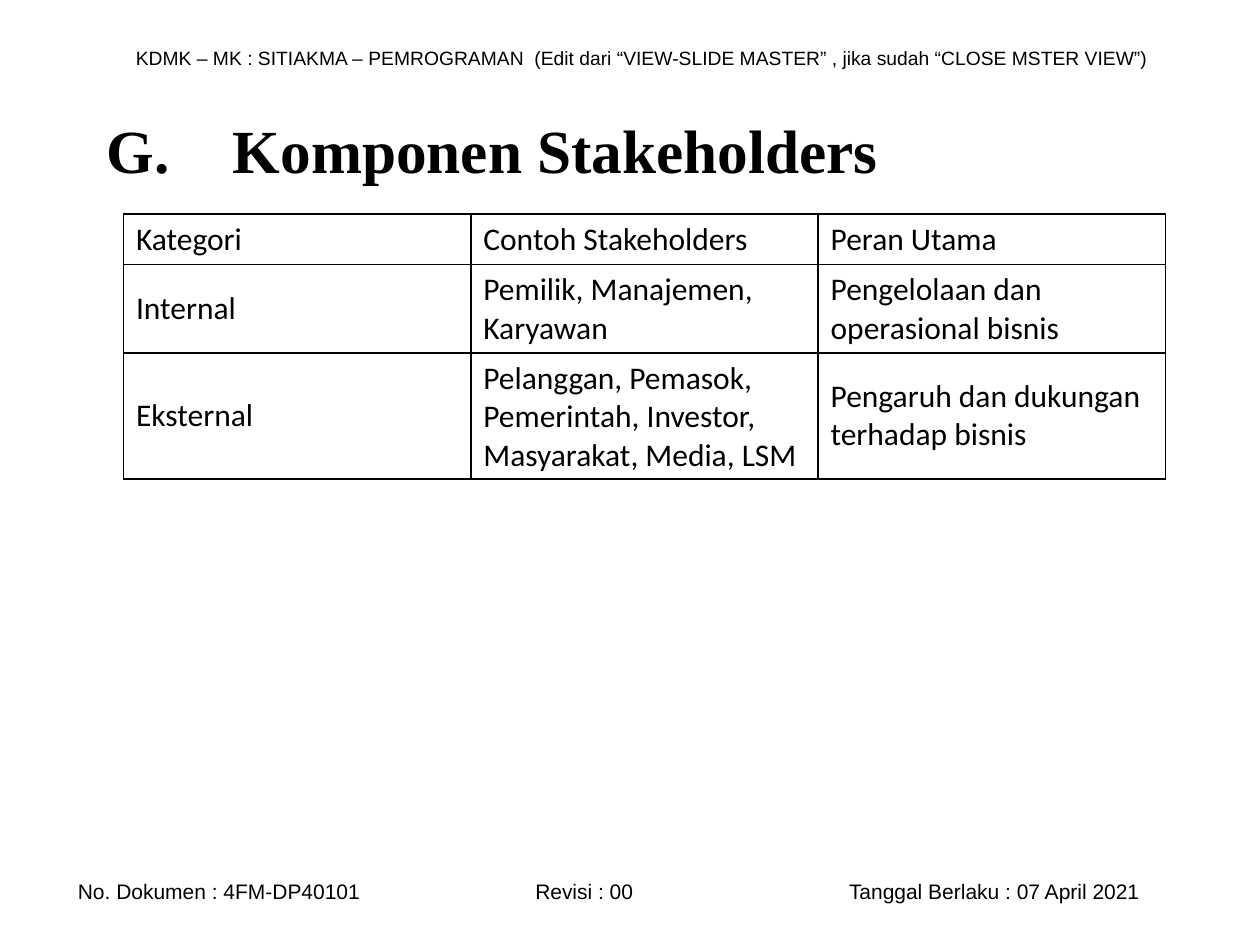
from dataclasses import dataclass

from lxml.etree import SubElement
from pptx import Presentation
from pptx.dml.color import RGBColor
from pptx.enum.text import MSO_ANCHOR as Anchor, PP_ALIGN as Align
from pptx.oxml import parse_xml
from pptx.oxml.ns import nsdecls, qn
from pptx.slide import Slide
from pptx.table import _Cell as Cell
from pptx.text.text import TextFrame
from pptx.util import Inches, Pt

BLACK = RGBColor(0x00, 0x00, 0x00)


@dataclass(frozen=True)
class TextLine:
    text: str
    left: float
    top: float
    width: float
    height: float
    size: float
    font: str = "Arial"
    bold: bool = False
    align: Align = Align.JUSTIFY
    anchor: Anchor = Anchor.MIDDLE
    tabs: tuple[float, ...] = ()


LINES = (
    TextLine(
        "KDMK – MK : SITIAKMA – PEMROGRAMAN  (Edit dari “VIEW-SLIDE MASTER” , "
        "jika sudah “CLOSE MSTER VIEW”)",
        0.98, 0.31, 8.35, 0.29, size=11,
    ),
    TextLine(
        "No. Dokumen : 4FM-DP40101\tRevisi : 00\tTanggal Berlaku : 07 April 2021",
        0.52, 6.92, 9.13, 0.3, size=12, align=Align.LEFT, tabs=(3.63, 6.12),
    ),
    TextLine(
        "G.\tKomponen Stakeholders",
        0.75, 0.84, 8.5, 0.69, size=35, font="Times New Roman", bold=True,
        align=Align.LEFT, anchor=Anchor.TOP, tabs=(1.0,),
    ),
)

STAKEHOLDERS = (
    ("Kategori", "Contoh Stakeholders", "Peran Utama"),
    ("Internal", "Pemilik, Manajemen, Karyawan", "Pengelolaan dan operasional bisnis"),
    (
        "Eksternal",
        "Pelanggan, Pemasok, Pemerintah, Investor, Masyarakat, Media, LSM",
        "Pengaruh dan dukungan terhadap bisnis",
    ),
)
ROW_HEIGHTS = (0.4, 0.7, 1.0)
TABLE_WIDTH = 8.27


def write_text(
    frame: TextFrame,
    text: str,
    *,
    size: float,
    font: str,
    bold: bool = False,
    align: Align = Align.LEFT,
    tabs: tuple[float, ...] = (),
) -> None:
    frame.word_wrap = True
    paragraph = frame.paragraphs[0]
    paragraph.text = text
    paragraph.alignment = align
    if tabs:
        tab_list = SubElement(paragraph._p.get_or_add_pPr(), qn("a:tabLst"))
        for position in tabs:
            SubElement(tab_list, qn("a:tab"), pos=str(Inches(position)), algn="l")
    for run in paragraph.runs:
        run.font.size = Pt(size)
        run.font.name = font
        run.font.bold = bold
        run.font.color.rgb = BLACK


def add_line(slide: Slide, line: TextLine) -> None:
    box = slide.shapes.add_textbox(
        Inches(line.left), Inches(line.top), Inches(line.width), Inches(line.height)
    )
    box.text_frame.vertical_anchor = line.anchor
    write_text(
        box.text_frame, line.text, size=line.size, font=line.font,
        bold=line.bold, align=line.align, tabs=line.tabs,
    )


def add_borders(cell: Cell) -> None:
    properties = cell._tc.get_or_add_tcPr()
    for index, side in enumerate(("lnL", "lnR", "lnT", "lnB")):
        border = parse_xml(
            f'<a:{side} {nsdecls("a")} w="{Pt(1)}"><a:solidFill>'
            f'<a:srgbClr val="{BLACK}"/></a:solidFill></a:{side}>'
        )
        properties.insert(index, border)


def add_stakeholder_table(slide: Slide) -> None:
    table = slide.shapes.add_table(
        len(STAKEHOLDERS), len(STAKEHOLDERS[0]),
        Inches(0.98), Inches(1.7), Inches(TABLE_WIDTH), Inches(sum(ROW_HEIGHTS)),
    ).table
    table.first_row = False
    table.horz_banding = False
    for row_index, (texts, height) in enumerate(zip(STAKEHOLDERS, ROW_HEIGHTS)):
        table.rows[row_index].height = Inches(height)
        for column_index, text in enumerate(texts):
            cell = table.cell(row_index, column_index)
            cell.vertical_anchor = Anchor.MIDDLE if row_index else Anchor.TOP
            cell.fill.background()
            add_borders(cell)
            write_text(cell.text_frame, text, size=18, font="Calibri")


def main() -> None:
    presentation = Presentation()
    presentation.slide_width = Inches(10)
    presentation.slide_height = Inches(7.5)
    slide = presentation.slides.add_slide(presentation.slide_layouts[6])
    for line in LINES:
        add_line(slide, line)
    add_stakeholder_table(slide)
    presentation.save("out.pptx")


if __name__ == "__main__":
    main()
